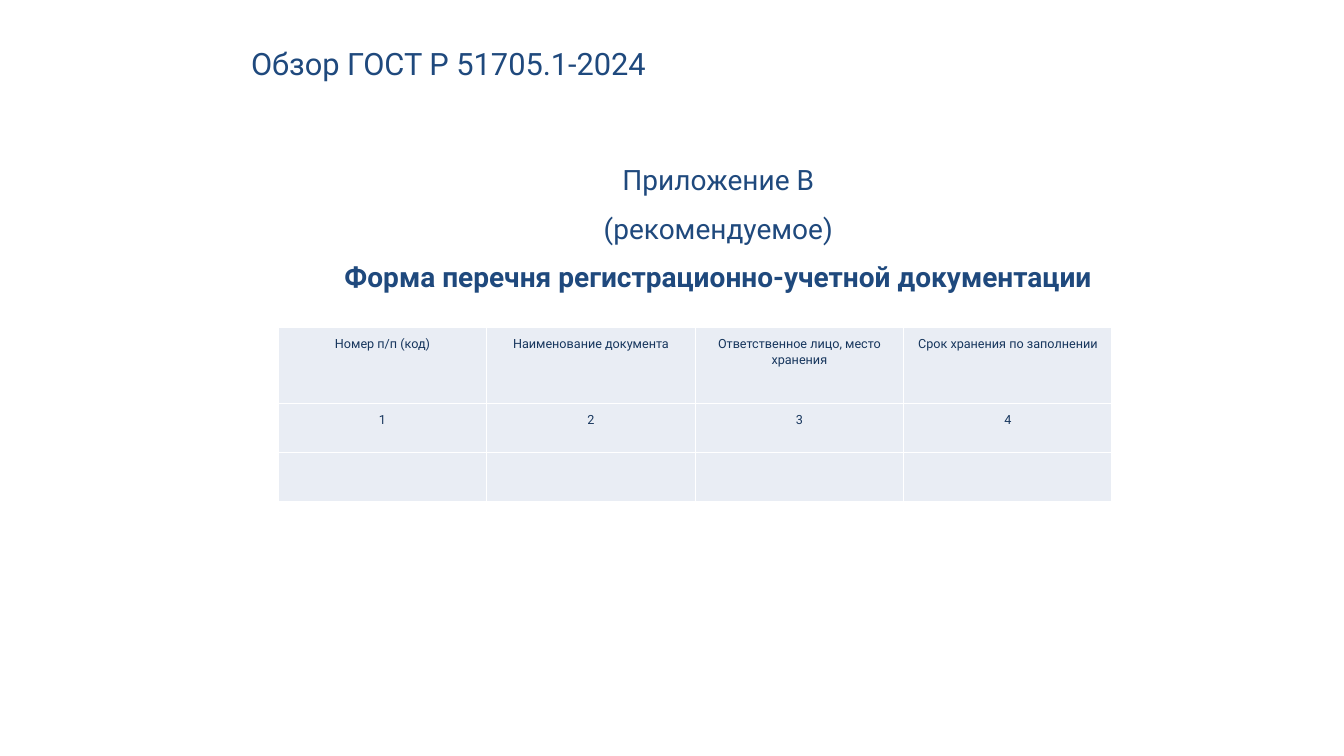
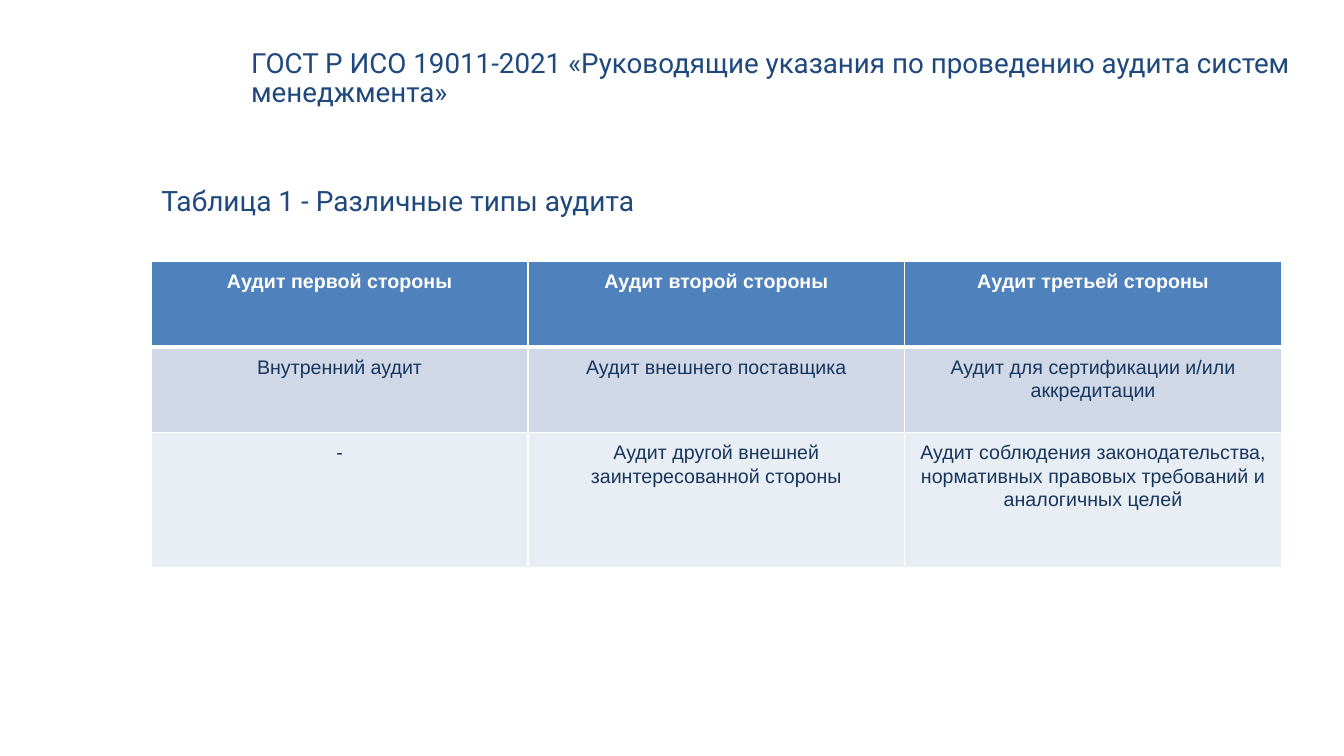
from lxml.etree import SubElement
from pptx import Presentation
from pptx.dml.color import RGBColor
from pptx.enum.text import MSO_ANCHOR, MSO_AUTO_SIZE, PP_ALIGN
from pptx.oxml.ns import qn
from pptx.util import Inches, Pt

COLORS = {
    "title": "1F497D",
    "cell_text": "17365D",
    "white": "FFFFFF",
    "header": "4F81BD",
    "band_dark": "D0D8E8",
    "band_light": "E9EDF4",
}
TITLE_BOX = (2.39, 0.44, 10.5, 0.68)
HEADING_FONT = "Roboto"


def add_run(paragraph, text, font, size, color, bold=False):
    run = paragraph.add_run()
    run.text = text
    run.font.name = font
    run.font.size = Pt(size)
    run.font.bold = bold
    run.font.color.rgb = RGBColor.from_string(COLORS[color])


def place(shape, box):
    """Move a text placeholder and anchor its text at the top."""
    shape.left, shape.top, shape.width, shape.height = map(Inches, box)
    frame = shape.text_frame
    frame.word_wrap = True
    frame.auto_size = MSO_AUTO_SIZE.NONE
    frame.vertical_anchor = MSO_ANCHOR.TOP
    return frame


def add_slide(presentation, title, title_size):
    slide = presentation.slides.add_slide(presentation.slide_layouts[1])
    paragraph = place(slide.shapes.title, TITLE_BOX).paragraphs[0]
    paragraph.alignment = PP_ALIGN.LEFT
    paragraph.line_spacing = 0.89
    add_run(paragraph, title, HEADING_FONT, title_size, "title")
    return slide


def fill_body(slide, box, lines, alignment):
    """Write (text, bold) lines without bullets in the body placeholder."""
    frame = place(slide.placeholders[1], box)
    for index, (text, bold) in enumerate(lines):
        paragraph = frame.add_paragraph() if index else frame.paragraphs[0]
        properties = paragraph._p.get_or_add_pPr()
        properties.set("marL", "0")
        properties.set("indent", "0")
        SubElement(properties, qn("a:buNone"))
        paragraph.alignment = alignment
        paragraph.line_spacing = 0.94
        paragraph.space_before = Pt(10 if index else 0)
        paragraph.space_after = Pt(2)
        add_run(paragraph, text, HEADING_FONT, 20, "title", bold)


def set_borders(cell, top, bottom):
    properties = cell._tc.get_or_add_tcPr()
    for edge, width in (("L", 1), ("R", 1), ("T", top), ("B", bottom)):
        line = SubElement(properties, qn(f"a:ln{edge}"), w=str(Pt(width)))
        fill = SubElement(line, qn("a:solidFill"))
        SubElement(fill, qn("a:srgbClr"), val=COLORS["white"])


def add_grid(slide, box, rows, heights, fills, font, size, has_header=False):
    frame = slide.shapes.add_table(len(rows), len(rows[0]), *map(Inches, box))
    table = frame.table
    table.first_row = has_header
    table.horz_banding = False
    for row_index, texts in enumerate(rows):
        table.rows[row_index].height = Inches(heights[row_index])
        is_header = has_header and row_index == 0
        # The rule below the header is thicker than the others
        top = 3 if has_header and row_index == 1 else 1
        bottom = 3 if is_header else 1
        for column_index, text in enumerate(texts):
            cell = table.cell(row_index, column_index)
            set_borders(cell, top, bottom)
            cell.fill.solid()
            cell.fill.fore_color.rgb = RGBColor.from_string(
                COLORS[fills[row_index]])
            cell.margin_left = cell.margin_right = Inches(0.02)
            cell.margin_top = cell.margin_bottom = Inches(0.08)
            if text:
                paragraph = cell.text_frame.paragraphs[0]
                paragraph.alignment = PP_ALIGN.CENTER
                paragraph.line_spacing = 1.07
                color = "white" if is_header else "cell_text"
                add_run(paragraph, text, font, size, color, is_header)


def add_form_slide(presentation):
    slide = add_slide(presentation, "Обзор ГОСТ Р 51705.1-2024", 22)
    fill_body(slide, (1.5, 1.59, 11.25, 5.39), [
        ("Приложение В", False),
        ("(рекомендуемое)", False),
        ("Форма перечня регистрационно-учетной документации", True),
    ], PP_ALIGN.CENTER)
    rows = [
        ["Номер п/п (код)", "Наименование документа",
         "Ответственное лицо, место хранения", "Срок хранения по заполнении"],
        ["1", "2", "3", "4"],
        [""] * 4,
    ]
    add_grid(slide, (2.76, 3.25, 8.27, 1.73), rows, (0.75, 0.49, 0.49),
             ["band_light"] * 3, "Roboto", 9)


def add_audit_slide(presentation):
    slide = add_slide(
        presentation,
        "ГОСТ Р ИСО 19011-2021 «Руководящие указания по проведению "
        "аудита систем менеджмента»", 19.8)
    fill_body(slide, (1.5, 1.8, 11.21, 4.61),
              [("Таблица 1 - Различные типы аудита", False)], PP_ALIGN.LEFT)
    rows = [
        ["Аудит первой стороны", "Аудит второй стороны",
         "Аудит третьей стороны"],
        ["Внутренний аудит", "Аудит внешнего поставщика",
         "Аудит для сертификации и/или аккредитации"],
        ["-", "Аудит другой внешней заинтересованной стороны",
         "Аудит соблюдения законодательства, нормативных правовых "
         "требований и аналогичных целей"],
    ]
    add_grid(slide, (1.5, 2.59, 11.21, 3.03), rows, (0.85, 0.85, 1.34),
             ["header", "band_dark", "band_light"], "Arial", 14,
             has_header=True)


def main():
    presentation = Presentation()
    presentation.slide_width = Inches(13.33)
    presentation.slide_height = Inches(7.5)
    add_form_slide(presentation)
    add_audit_slide(presentation)
    presentation.save("out.pptx")


if __name__ == "__main__":
    main()
